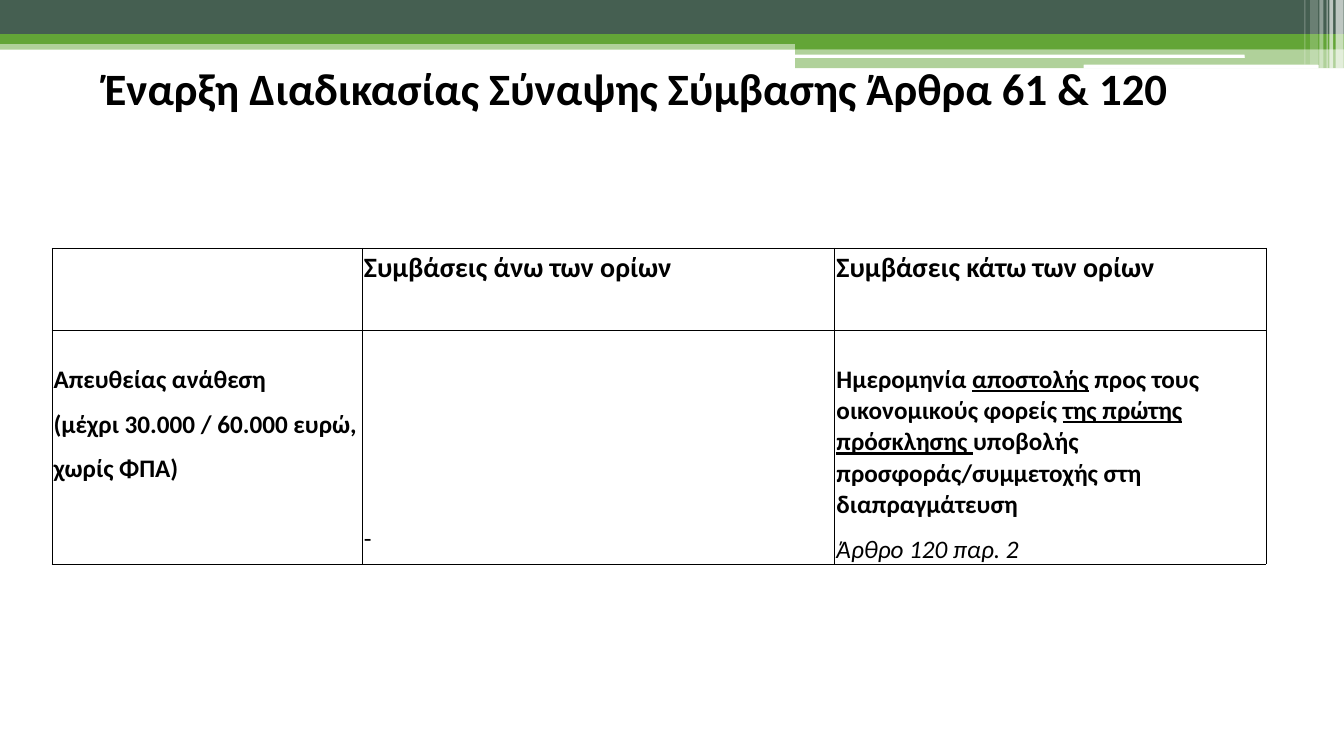
from lxml.etree import SubElement
from pptx import Presentation
from pptx.dml.color import RGBColor
from pptx.enum.shapes import MSO_SHAPE as SHAPE
from pptx.enum.text import MSO_ANCHOR as ANCHOR, MSO_AUTO_SIZE as AUTO, PP_ALIGN as ALIGN
from pptx.oxml.ns import qn
from pptx.util import Cm, Pt

COLORS = {"dark": "455F51", "green": "63A537", "white": "FFFFFF", "black": "000000"}
W, H = 33.87, 19.05

prs = Presentation()
prs.slide_width, prs.slide_height = Cm(W), Cm(H)
s = prs.slides.add_slide(prs.slide_layouts[6])


def add_bar(kind, x, y, w, h, color, opacity=100):
    sp = s.shapes.add_shape(kind, Cm(x), Cm(y), Cm(w), Cm(h))
    sp.shadow.inherit = False
    sp.line.fill.background()
    sp.fill.solid()
    sp.fill.fore_color.rgb = RGBColor.from_string(COLORS[color])
    if opacity < 100:
        clr = sp.fill._xPr.find(qn("a:solidFill"))[0]
        SubElement(clr, qn("a:alpha"), val=str(opacity * 1000))


def add_runs(p, runs, size):
    """Fill a paragraph with (text, format) pairs; text is bold unless told otherwise."""
    for text, extra in runs:
        r = p.add_run()
        r.text = text
        r.font.color.rgb = RGBColor.from_string(COLORS["black"])
        fmt = {"name": "Calibri", "size": Pt(size), "bold": True, **extra}
        for key, value in fmt.items():
            setattr(r.font, key, value)


# Header bands
right_x, right_w = 20.04, 13.83
for bar in [
    (SHAPE.RECTANGLE, 0, 1.02, W, 0.23, "green", 50),
    (SHAPE.RECTANGLE, 0, 0, W, 0.86, "dark"),
    (SHAPE.RECTANGLE, 0, 0.86, W, 0.25, "green"),
    (SHAPE.RECTANGLE, right_x, 0.99, right_w, 0.25, "green"),
    (SHAPE.RECTANGLE, right_x, 1.22, right_w, 0.5, "green", 50),
    (SHAPE.ROUNDED_RECTANGLE, 20.02, 1.38, 11.35, 0.08, "white"),
    (SHAPE.ROUNDED_RECTANGLE, 27.31, 1.63, 5.92, 0.1, "white"),
]:
    add_bar(*bar)

# Translucent stripes in the right corner
for x, w, h, opacity in [
    (33.66, 0.2, 1.73, 65), (33.5, 0.1, 1.73, 65), (33.43, 0.03, 1.73, 60),
    (33.25, 0.1, 1.73, 40), (33.02, 0.2, 1.63, 20), (32.87, 0.03, 1.63, 30),
]:
    add_bar(SHAPE.RECTANGLE, x, 0, w, h, "white", opacity)

# Title
tf = s.shapes.add_textbox(Cm(0.64), Cm(1.4), Cm(30.81), Cm(1.63)).text_frame
tf.word_wrap = True
tf.auto_size = AUTO.SHAPE_TO_FIT_TEXT
tf.paragraphs[0].alignment = ALIGN.CENTER
add_runs(tf.paragraphs[0], [("Έναρξη Διαδικασίας Σύναψης Σύμβασης Άρθρα 61 & 120", {})], 32)

# Table
col_widths, row_heights = [7.82, 11.91, 10.87], [2.07, 5.85]
tbl = s.shapes.add_table(2, 3, Cm(1.3), Cm(6.25), Cm(sum(col_widths)),
                         Cm(sum(row_heights))).table
tbl.first_row = tbl.horz_banding = False
for col, width in zip(tbl.columns, col_widths):
    col.width = Cm(width)
for row, height in zip(tbl.rows, row_heights):
    row.height = Cm(height)

for cell in tbl.iter_cells():
    margins = {"margin_left": 0.05, "margin_right": 0.05, "margin_top": 0.05, "margin_bottom": 0.05}
    for key, value in margins.items():
        setattr(cell, key, Cm(value))
    tcPr = cell._tc.get_or_add_tcPr()
    for side in ("lnL", "lnR", "lnT", "lnB"):
        ln = SubElement(tcPr, qn(f"a:{side}"), w=str(Pt(0.06)))
        fill = SubElement(ln, qn("a:solidFill"))
        SubElement(fill, qn("a:srgbClr"), val=COLORS["black"])
    cell.fill.background()

underlined = {"underline": True}
# (row, column): size, paragraphs as (line spacing, runs)
cell_texts = {
    (0, 1): (20, [(1.02, [("Συμβάσεις άνω των ορίων", {})])]),
    (0, 2): (20, [(1.02, [("Συμβάσεις κάτω των ορίων", {})])]),
    (1, 0): (18, [
        (1.02, [("Απευθείας ανάθεση", {})]),
        (1.46, [("(μέχρι 30.000 / 60.000 ευρώ, χωρίς ΦΠΑ)", {})]),
    ]),
    (1, 1): (18, [(1.0, [("-", {"bold": False})])]),
    (1, 2): (18, [
        (1.02, [
            ("Ημερομηνία ", {}),
            ("αποστολής", underlined),
            (" προς τους οικονομικούς φορείς ", {}),
            ("της πρώτης πρόσκλησης ", underlined),
            ("υποβολής προσφοράς/συμμετοχής στη διαπραγμάτευση", {}),
        ]),
        (1.46, [("Άρθρο 120 παρ. 2", {"bold": False, "italic": True})]),
    ]),
}
for (row, col), (size, paragraphs) in cell_texts.items():
    tf = tbl.cell(row, col).text_frame
    for i, (spacing, runs) in enumerate(paragraphs):
        p = tf.add_paragraph() if i else tf.paragraphs[0]
        p.line_spacing = spacing
        add_runs(p, runs, size)

tbl.cell(1, 0).margin_top = tbl.cell(1, 2).margin_top = Cm(0.84)
tbl.cell(1, 1).vertical_anchor = ANCHOR.BOTTOM
tbl.cell(1, 1).margin_bottom = Cm(0.25)

prs.save("out.pptx")
